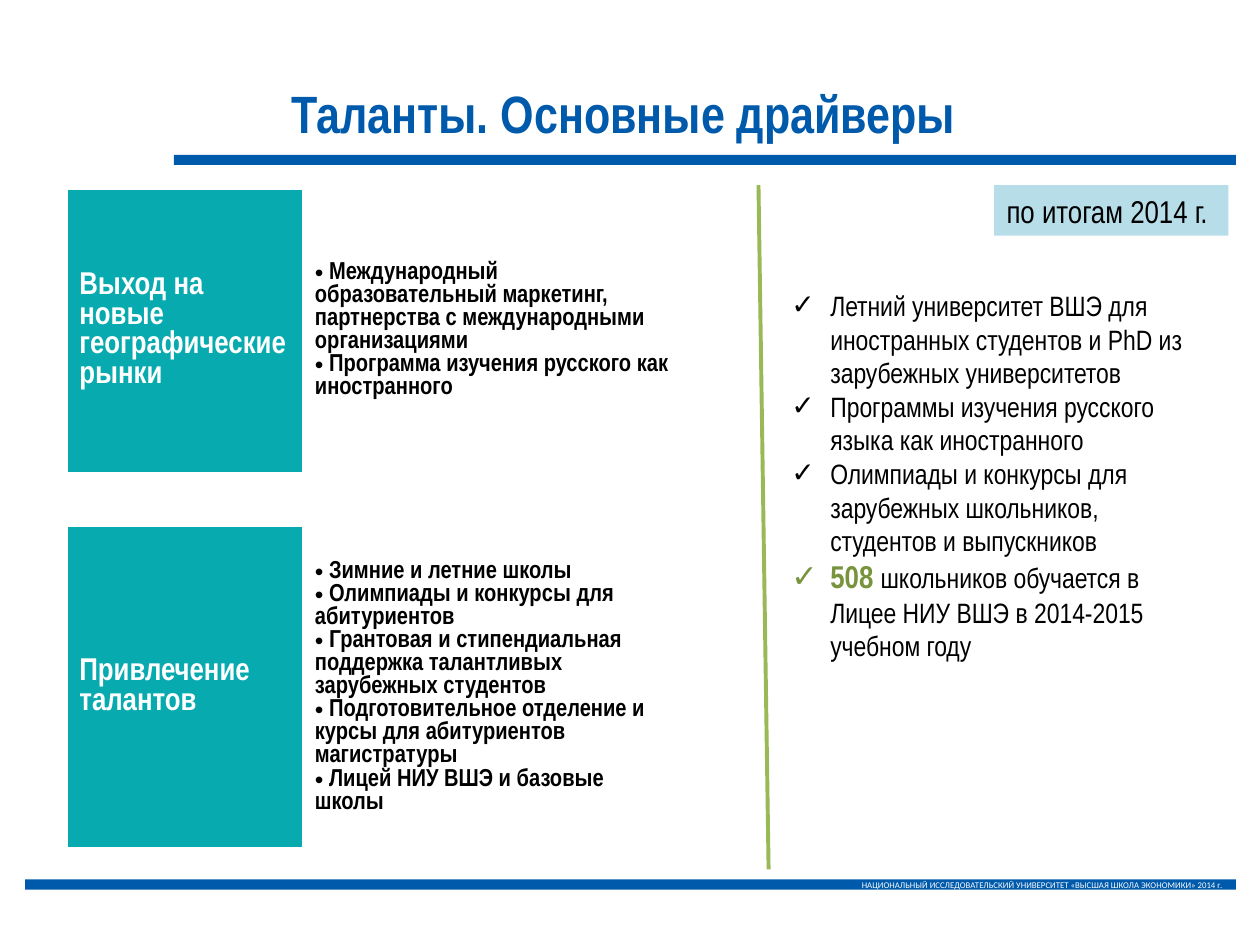
import pptx
import pptx.dml.color
import pptx.enum.shapes
import pptx.enum.text
import pptx.util
import lxml.etree

COLORS = {"blue": "005AAB", "teal": "07AAAF", "pale": "B7DEE8", "line": "98B955",
          "green": "77933C", "white": "FFFFFF", "black": "000000"}
RGB = {name: pptx.dml.color.RGBColor.from_string(c) for name, c in COLORS.items()}
ALIGN = pptx.enum.text.PP_ALIGN
ANCHOR = pptx.enum.text.MSO_ANCHOR
RECT = pptx.enum.shapes.MSO_SHAPE.RECTANGLE
A = "{http://schemas.openxmlformats.org/drawingml/2006/main}"

prs = pptx.Presentation()
prs.slide_width = pptx.util.Inches(10)
prs.slide_height = pptx.util.Inches(7.5)
s = prs.slides.add_slide(prs.slide_layouts[1])


def area(x, y, w, h):
    """Turn percentages of the slide's width and height into lengths."""
    return [int(prs.slide_width * x / 100), int(prs.slide_height * y / 100),
            int(prs.slide_width * w / 100), int(prs.slide_height * h / 100)]


def write(p, runs, align=ALIGN.LEFT, bullet=None, indent=0, font="Arial Narrow"):
    """Fill a paragraph with (text, size, color, bold) runs."""
    p.alignment = align
    p.line_spacing = 1.0
    p.space_before = pptx.util.Pt(0)
    if bullet:
        pPr = p._p.get_or_add_pPr()
        pPr.set("marL", str(pptx.util.Inches(indent)))
        pPr.set("indent", str(-pptx.util.Inches(indent)))
        lxml.etree.SubElement(pPr, A + "buFont", typeface="Arial")
        lxml.etree.SubElement(pPr, A + "buChar", char=bullet)
    for text, size, color, bold in runs:
        r = p.add_run()
        r.text = text
        r.font.name = font
        r.font.size = pptx.util.Pt(size)
        r.font.bold = bold
        r.font.color.rgb = RGB[color]


# Title and list placeholders
title, body = s.shapes.title, s.placeholders[1]
for sp, box in [(title, (4.6, 7.87, 89.8, 7.6)), (body, (61.8, 29.87, 35.1, 42.13))]:
    sp.left, sp.top, sp.width, sp.height = area(*box)
    tf = sp.text_frame
    tf.word_wrap = True
    tf.auto_size = pptx.enum.text.MSO_AUTO_SIZE.NONE
    tf.vertical_anchor = ANCHOR.TOP
write(title.text_frame.paragraphs[0], [("Таланты. Основные драйверы", 30, "blue", True)], ALIGN.CENTER)

# Results of the year
results = [
    [("Летний университет ВШЭ для иностранных студентов и PhD из зарубежных университетов", 16, "black", False)],
    [("Программы изучения русского языка как иностранного", 16, "black", False)],
    [("Олимпиады и конкурсы для зарубежных школьников, студентов и выпускников", 16, "black", False)],
    [("508 ", 18, "green", True),
     ("школьников обучается в Лицее НИУ ВШЭ в 2014-2015 учебном году", 16, "black", False)],
]
tf = body.text_frame
for i, runs in enumerate(results):
    p = tf.add_paragraph() if i else tf.paragraphs[0]
    write(p, runs, bullet="✓", indent=0.31)

# Header bar, footer bar and year label
footer = "НАЦИОНАЛЬНЫЙ ИССЛЕДОВАТЕЛЬСКИЙ УНИВЕРСИТЕТ «ВЫСШАЯ ШКОЛА ЭКОНОМИКИ» 2014 г."
blocks = [
    ((13.8, 16.4, 84.3, 1.07), "blue", None, None, None),
    ((2, 93.07, 96.1, 1.07), "blue", (footer, 5, "white", False), ALIGN.RIGHT, "Calibri"),
    ((78.9, 19.6, 18.6, 5.33), "pale", ("по итогам 2014 г.", 18, "black", False), ALIGN.LEFT, "Arial Narrow"),
]
for box, fill, run, align, font in blocks:
    sp = s.shapes.add_shape(RECT, *area(*box))
    sp.shadow.inherit = False
    sp.fill.solid()
    sp.fill.fore_color.rgb = RGB[fill]
    sp.line.fill.background()
    if run:
        sp.text_frame.word_wrap = True
        sp.text_frame.vertical_anchor = ANCHOR.MIDDLE
        write(sp.text_frame.paragraphs[0], [run], align, font=font)

# Table of drivers, with an empty row between the two groups
drivers = [
    (30, "Выход на новые географические рынки",
     ["Международный образовательный маркетинг, партнерства с международными организациями",
      "Программа изучения русского как иностранного"]),
    (5.73, "", []),
    (34, "Привлечение талантов",
     ["Зимние и летние школы",
      "Олимпиады и конкурсы для абитуриентов",
      "Грантовая и стипендиальная поддержка талантливых зарубежных студентов",
      "Подготовительное отделение и курсы для абитуриентов магистратуры",
      "Лицей НИУ ВШЭ и базовые школы"]),
]
table = s.shapes.add_table(len(drivers), 2, *area(5.3, 20, 49.4, 69.73)).table
table.first_row = table.horz_banding = False
for column, share in zip(table.columns, (18.7, 30.7)):
    column.width = int(prs.slide_width * share / 100)
for row, (share, heading, items) in zip(table.rows, drivers):
    row.height = int(prs.slide_height * share / 100)
    head, detail = row.cells
    for cell, color in [(head, "teal" if heading else "white"), (detail, "white")]:
        cell.vertical_anchor = ANCHOR.MIDDLE
        cell.fill.solid()
        cell.fill.fore_color.rgb = RGB[color]
    if heading:
        write(head.text_frame.paragraphs[0], [(heading, 18, "white", True)])
    tf = detail.text_frame
    for i, item in enumerate(items):
        p = tf.add_paragraph() if i else tf.paragraphs[0]
        write(p, [(" " + item, 14, "black", True)], bullet="•")

# Divider
x, y, w, h = area(60.2, 19.6, 0.8, 72.4)
line = s.shapes.add_connector(pptx.enum.shapes.MSO_CONNECTOR.STRAIGHT, x, y, x + w, y + h)
line.line.color.rgb = RGB["line"]
line.line.width = pptx.util.Pt(2.25)
lxml.etree.SubElement(line._element.spPr, A + "effectLst")

prs.save("out.pptx")
